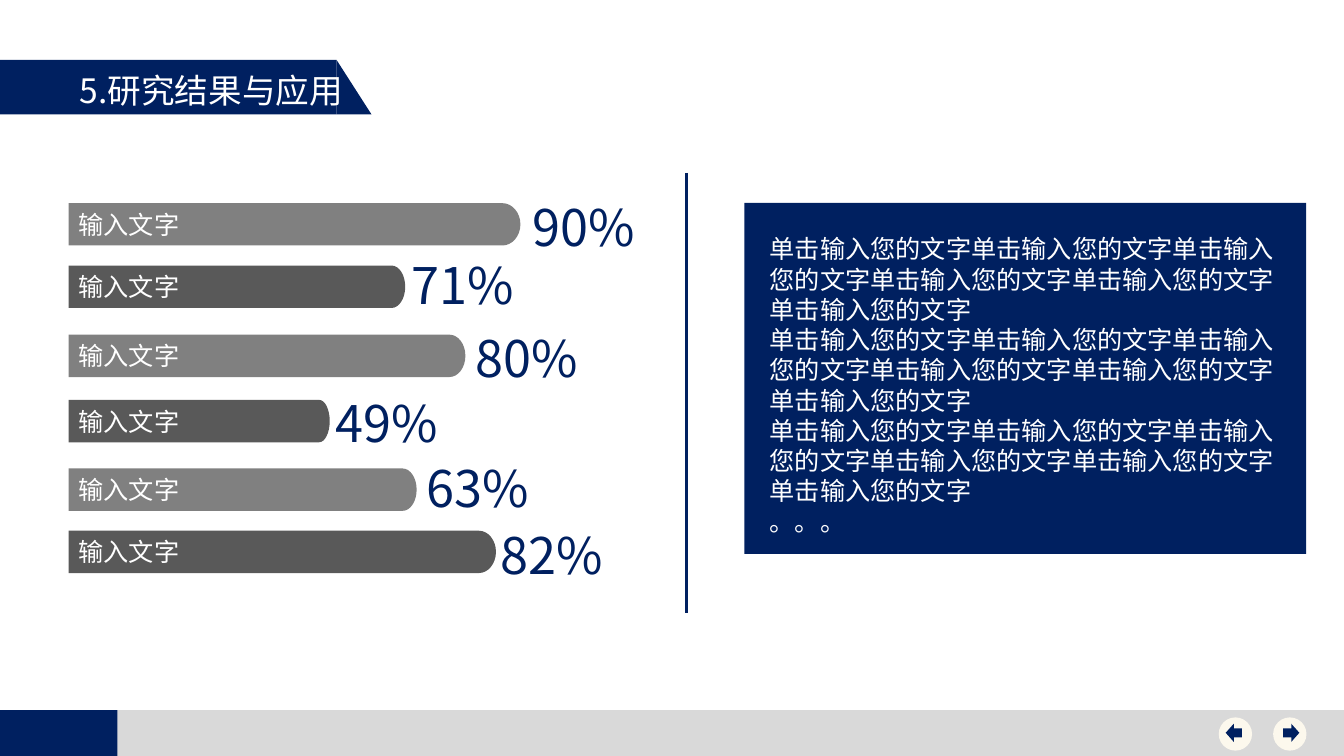
from typing import NamedTuple

from lxml.etree import Element, SubElement
from pptx import Presentation
from pptx.dml.color import RGBColor
from pptx.enum.shapes import MSO_CONNECTOR, MSO_SHAPE as Preset
from pptx.enum.text import MSO_ANCHOR as Anchor, MSO_AUTO_SIZE as AutoSize, PP_ALIGN as Align
from pptx.oxml.ns import qn
from pptx.util import Inches, Pt

NAVY = RGBColor(0x00, 0x20, 0x60)
CREAM = RGBColor(0xFC, 0xF8, 0xED)
PALE_GREY = RGBColor(0xD9, 0xD9, 0xD9)
MID_GREY = RGBColor(0x80, 0x80, 0x80)
DARK_GREY = RGBColor(0x59, 0x59, 0x59)
WHITE = RGBColor(0xFF, 0xFF, 0xFF)

FONT = "Noto Sans CJK SC"
SLIDE_WIDTH, SLIDE_HEIGHT = Inches(13.33), Inches(7.5)
BAR_LEFT, BAR_HEIGHT = 5.1, 5.6
CURVE_PULL = 0.55  # Bezier handle length of a quarter ellipse, as a share of its radius


class Area(NamedTuple):
    """A rectangle in percent of the slide's width and height."""
    left: float
    top: float
    width: float
    height: float


class Bar(NamedTuple):
    top: float
    width: float
    figure: str
    figure_left: float
    figure_top: float


class NavButton(NamedTuple):
    circle_left: float
    arrow_left: float
    arrow: Preset


BARS = [
    Bar(26.87, 33.62, "90%", 38.88, 25.27),
    Bar(35.13, 25.05, "71%", 29.85, 32.93),
    Bar(44.27, 29.53, "80%", 34.65, 42.57),
    Bar(52.9, 19.43, "49%", 24.23, 51.2),
    Bar(61.97, 25.9, "63%", 30.98, 59.87),
    Bar(70.2, 31.8, "82%", 36.53, 68.67),
]
NAV_BUTTONS = [
    NavButton(94.73, 95.48, Preset.RIGHT_ARROW),
    NavButton(90.68, 91.2, Preset.LEFT_ARROW),
]
PANEL_LINES = ["单击输入您的文字" * 6] * 3 + ["。。。"]


def across(percent: float) -> int:
    return round(SLIDE_WIDTH * percent / 100)


def down(percent: float) -> int:
    return round(SLIDE_HEIGHT * percent / 100)


def to_emu(area: Area) -> tuple[int, int, int, int]:
    return across(area.left), down(area.top), across(area.width), down(area.height)


def paint(shape, color: RGBColor) -> None:
    shape.fill.solid()
    shape.fill.fore_color.rgb = color
    shape.line.fill.background()
    shape.shadow.inherit = False


def add_block(slide, preset: Preset, area: Area, color: RGBColor):
    block = slide.shapes.add_shape(preset, *to_emu(area))
    paint(block, color)
    return block


def write(shape, lines: list[str], size: float, color: RGBColor,
          anchor: Anchor = Anchor.TOP, fit: AutoSize = AutoSize.SHAPE_TO_FIT_TEXT) -> None:
    frame = shape.text_frame
    frame.word_wrap = True
    frame.auto_size = fit
    frame.vertical_anchor = anchor
    for index, line in enumerate(lines):
        para = frame.add_paragraph() if index else frame.paragraphs[0]
        para.alignment = Align.LEFT
        span = para.add_run()
        span.text = line
        span.font.size = Pt(size)
        span.font.name = FONT
        span.font.color.rgb = color
        SubElement(span.font._element, qn("a:ea")).set("typeface", FONT)


def bend(segment, handles: list[tuple[float, float]]) -> None:
    """Turn a straight freeform segment into a cubic curve with two handles."""
    segment.tag = qn("a:cubicBezTo")
    for index, (x, y) in enumerate(handles):
        segment.insert(index, Element(qn("a:pt"), x=str(round(x)), y=str(round(y))))


def add_bar(slide, bar: Bar, color: RGBColor) -> None:
    """Draw a bar with a half-elliptical right end, its label and its figure."""
    left, top, width, height = to_emu(Area(BAR_LEFT, bar.top, bar.width, BAR_HEIGHT))
    shoulder, middle = round(width * 0.96), height // 2
    corners = [(shoulder, 0), (width, middle), (shoulder, height), (0, height)]
    builder = slide.shapes.build_freeform(0, 0)
    builder.add_line_segments(corners, close=True)
    body = builder.convert_to_shape(left, top)
    _, upper, lower, _ = list(body.element.iter(qn("a:lnTo")))
    handle_x = shoulder + CURVE_PULL * (width - shoulder)
    rise = (1 - CURVE_PULL) * middle
    bend(upper, [(handle_x, 0), (width, rise)])
    bend(lower, [(width, height - rise), (handle_x, height)])
    paint(body, color)
    write(body, ["输入文字"], 18, WHITE, Anchor.MIDDLE, AutoSize.NONE)

    area = Area(bar.figure_left, bar.figure_top, 10.73, 9.47)
    write(slide.shapes.add_textbox(*to_emu(area)), [bar.figure], 36, NAVY)


def add_footer(slide) -> None:
    add_block(slide, Preset.RECTANGLE, Area(0, 93.95, 100, 6.1), PALE_GREY)
    add_block(slide, Preset.RECTANGLE, Area(0, 93.95, 8.73, 6.1), NAVY)
    for button in NAV_BUTTONS:
        add_block(slide, Preset.OVAL, Area(button.circle_left, 94.9, 2.48, 4.4), CREAM)
        add_block(slide, button.arrow, Area(button.arrow_left, 95.73, 1.2, 2.4), NAVY)


def add_heading(slide) -> None:
    add_block(slide, Preset.RECTANGLE, Area(0, 7.93, 25.05, 7.2), NAVY)
    add_block(slide, Preset.RIGHT_TRIANGLE, Area(25.05, 7.95, 2.6, 7.2), NAVY)
    title = slide.shapes.title
    title.left, title.top, title.width, title.height = to_emu(Area(5.18, 8.6, 22.43, 6.67))
    write(title, ["5.研究结果与应用"], 24, WHITE)
    slide.shapes.element.append(title.element)  # bring the title in front of its band


def add_divider(slide) -> None:
    x = across(51.08)
    divider = slide.shapes.add_connector(MSO_CONNECTOR.STRAIGHT, x, down(22.87), x, down(81.07))
    divider.line.color.rgb = NAVY
    divider.line.width = Pt(2.5)
    SubElement(divider.element.spPr, qn("a:effectLst"))


def add_panel(slide) -> None:
    add_block(slide, Preset.RECTANGLE, Area(55.38, 26.85, 41.8, 46.43), NAVY)
    box = add_block(slide, Preset.RECTANGLE, Area(56.53, 30.27, 39.23, 41.73), NAVY)
    write(box, PANEL_LINES, 18, WHITE)


def main() -> None:
    deck = Presentation()
    deck.slide_width, deck.slide_height = SLIDE_WIDTH, SLIDE_HEIGHT
    page = deck.slides.add_slide(deck.slide_layouts.get_by_name("Title Only"))
    add_footer(page)
    add_heading(page)
    for index, bar in enumerate(BARS):
        add_bar(page, bar, DARK_GREY if index % 2 else MID_GREY)
    add_divider(page)
    add_panel(page)
    deck.save("out.pptx")


if __name__ == "__main__":
    main()
